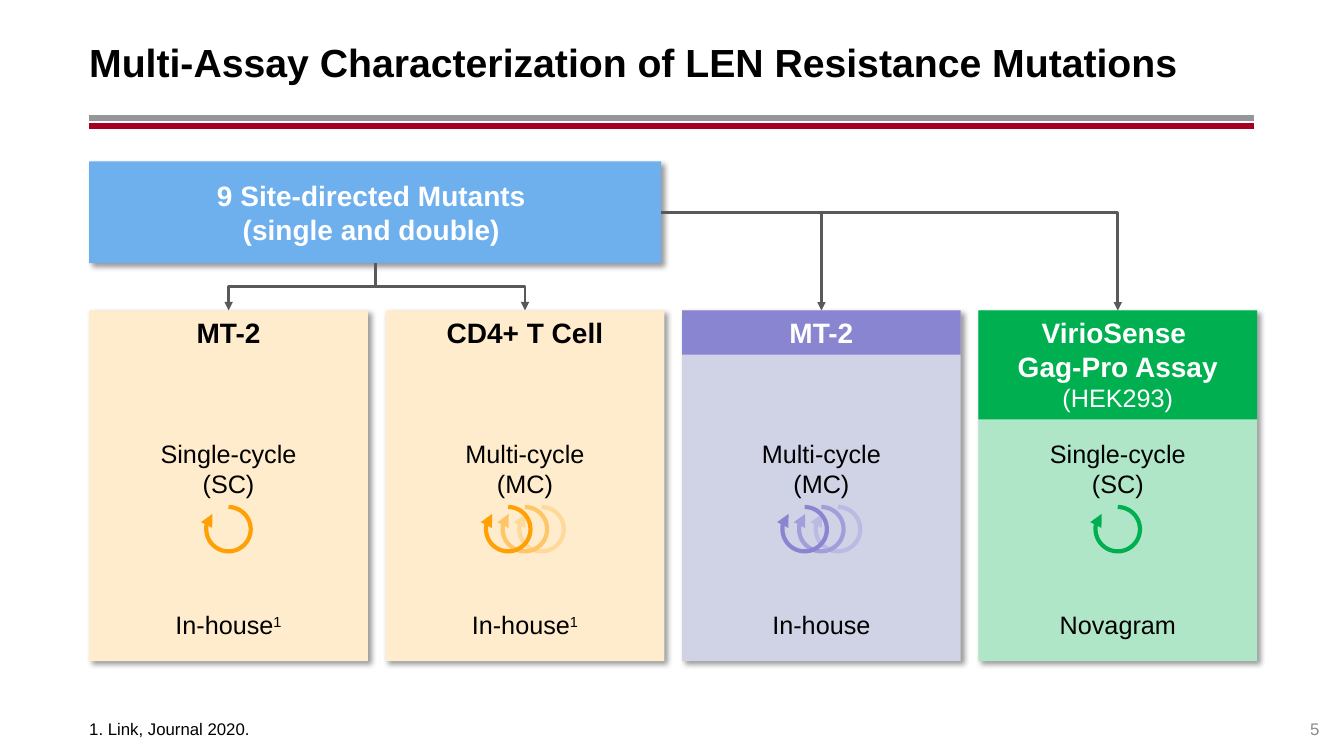
import dataclasses

import pptx
import pptx.dml.color
import pptx.enum.shapes
import pptx.enum.text
import pptx.oxml
import pptx.oxml.ns
import pptx.util

SHAPE = pptx.enum.shapes.MSO_SHAPE
ALIGN = pptx.enum.text.PP_ALIGN
ANCHOR = pptx.enum.text.MSO_ANCHOR
NS = pptx.oxml.ns.nsdecls("a")


@dataclasses.dataclass(frozen=True)
class Theme:
    font: str = "Arial"
    title: int = 28
    head: int = 20
    body: int = 18
    note: int = 12
    black: str = "000000"
    white: str = "FFFFFF"
    grey: str = "8C8C8C"
    rule_grey: str = "969696"
    rule_red: str = "A50021"
    arrow: str = "595959"
    blue: str = "6EAFEE"
    cream: str = "FFECCD"
    lilac: str = "D0D2E6"
    mint: str = "B0E6C8"
    purple: str = "8985D1"
    green: str = "00B050"
    oranges: tuple = ("FFA004", "FFC668", "FFD99B")
    purples: tuple = ("8985D1", "A19EDA", "BCBAE4")


T = Theme()
CARD, SPAN = 0.94, 3.93  # widths in columns
CARD_TOP, CARD_ROWS = 30.8, 34.8
CYCLE = 0.15


def rgb(colour):
    return pptx.dml.color.RGBColor.from_string(colour)


class Sheet:
    """One slide on a grid of 2.94 inch columns and 0.1 inch rows."""

    def __init__(self, prs, theme):
        self.theme = theme
        self.s = prs.slides.add_slide(prs.slide_layouts[5])

    def x(self, col):
        return pptx.util.Inches(0.885 + 2.94 * col)

    def y(self, row):
        return pptx.util.Inches(0.1 * row)

    def box(self, col, row, cols, rows):
        left, top = self.x(col), self.y(row)
        return left, top, self.x(col + cols) - left, self.y(row + rows) - top

    def set_text(self, sp, paras, colour=T.black, align=ALIGN.CENTER, anchor=ANCHOR.TOP,
                 gap=0, margins=(0.1, 0.05, 0.1, 0.05), sup=""):
        """Fill sp with (text, size, bold) paragraphs; sup is a closing superscript."""
        tf = sp.text_frame
        tf.word_wrap = True
        tf.auto_size = pptx.enum.text.MSO_AUTO_SIZE.NONE
        tf.vertical_anchor = anchor
        tf.margin_left, tf.margin_top, tf.margin_right, tf.margin_bottom = map(
            pptx.util.Inches, margins)
        for i, (text, size, bold) in enumerate(paras):
            p = tf.add_paragraph() if i else tf.paragraphs[0]
            p.text = text
            p.alignment = align
            p.space_before = p.space_after = pptx.util.Pt(gap)
            if sup:
                r = p.add_run()
                r.text = sup
                r._r.get_or_add_rPr().set("baseline", "30000")
            for r in p.runs:
                r.font.name, r.font.size, r.font.bold = self.theme.font, pptx.util.Pt(size), bold
                r.font.color.rgb = rgb(colour)

    def title(self, text, *place):
        sp = self.s.shapes.title
        sp.left, sp.top, sp.width, sp.height = self.box(*place)
        self.set_text(sp, [(text, self.theme.title, True)], align=ALIGN.LEFT,
                      anchor=ANCHOR.MIDDLE, margins=(0, 0.05, 0.1, 0.05))

    def text(self, place, paras, **style):
        self.set_text(self.s.shapes.add_textbox(*self.box(*place)), paras, **style)

    def rect(self, place, fill, paras=(), shadow=True, **style):
        sp = self.s.shapes.add_shape(SHAPE.RECTANGLE, *self.box(*place))
        sp.fill.solid()
        sp.fill.fore_color.rgb = rgb(fill)
        sp.line.fill.background()
        sp.shadow.inherit = False
        if shadow:
            sp._element.spPr.find(pptx.oxml.ns.qn("a:effectLst")).append(pptx.oxml.parse_xml(
                f'<a:outerShdw {NS} blurRad="50800" dist="38100" dir="2700000" algn="tl" '
                'rotWithShape="0"><a:srgbClr val="000000"><a:alpha val="40000"/>'
                '</a:srgbClr></a:outerShdw>'))
        self.set_text(sp, paras, **style)
        return sp

    def stroke(self, sp, colour, points, arrow=True):
        sp.line.color.rgb = rgb(colour)
        sp.line.width = pptx.util.Pt(points)
        if arrow:
            sp.line._get_or_add_ln().append(
                pptx.oxml.parse_xml(f'<a:tailEnd {NS} type="triangle"/>'))

    def connector(self, kind, *ends):
        c = self.s.shapes.add_connector(kind, *ends)
        c._element.spPr.append(pptx.oxml.parse_xml(f"<a:effectLst {NS}/>"))
        return c

    def rule(self, row, colour):
        y = self.y(row)
        c = self.connector(pptx.enum.shapes.MSO_CONNECTOR.STRAIGHT,
                           self.x(0), y, self.x(SPAN), y)
        self.stroke(c, colour, 4.25, arrow=False)

    def elbow(self, source, card, side):
        """Bent arrow from the source's bottom (2) or right (3) to the card's top."""
        c = self.connector(pptx.enum.shapes.MSO_CONNECTOR.ELBOW, 0, 0, 0, 0)
        c.begin_connect(source, side)
        c.end_connect(card, 0)
        x1, y1, x2, y2 = c.begin_x, c.begin_y, c.end_x, c.end_y
        width, height = abs(x2 - x1), y2 - y1
        rot, flip = 0, "0"
        if side == 2:
            rot, flip = (270, "1") if x2 > x1 else (90, "0")
            width, height = height, width
        else:
            c._element.spPr.prstGeom.set("prst", "bentConnector2")
        xfrm = c._element.spPr.xfrm
        for name, value in (("rot", str(rot * 60000)), ("flipH", flip), ("flipV", "0")):
            xfrm.set(name, value)
        c.left, c.top = (x1 + x2 - width) // 2, (y1 + y2 - height) // 2
        c.width, c.height = width, height
        self.stroke(c, self.theme.arrow, 2)

    def cycles(self, centre, row, colours):
        """Overlapping circular arrows centred on a column, the first colour in front."""
        step = CYCLE * 3 / 8
        first = centre - CYCLE / 2 - step * (len(colours) - 1) / 2
        for i, colour in reversed(list(enumerate(colours))):
            sp = self.s.shapes.add_shape(
                SHAPE.ARC, *self.box(first + i * step, row, CYCLE, 4.4))
            sp.adjustments[0], sp.adjustments[1] = 162, 134.11
            sp.fill.background()
            sp.shadow.inherit = False
            self.stroke(sp, colour, 3)


def main():
    prs = pptx.Presentation()
    prs.slide_width, prs.slide_height = pptx.util.Inches(13.33), pptx.util.Inches(7.5)
    sheet = Sheet(prs, T)
    sheet.rule(11.7, T.rule_grey)
    sheet.rule(12.5, T.rule_red)
    sheet.title("Multi-Assay Characterization of LEN Resistance Mutations", 0, 1.8, SPAN, 8.6)

    mutants = sheet.rect((0, 16, 1.93, 10.1), T.blue,
                         [("9 Site-directed Mutants ", T.head, True),
                          ("(single and double) ", T.head, True)],
                         colour=T.white, anchor=ANCHOR.MIDDLE)

    single, multi = "Single-cycle\v(SC)", "Multi-cycle\v(MC)"
    mt2 = [("MT-2", T.head, True)]
    tcell = [("CD4+ T Cell", T.head, True)]
    gag_pro = [("VirioSense \vGag-Pro Assay", T.head, True), ("(HEK293)", T.body, False)]
    # card fill, heading, band fill, band rows, cycle label, cycle colours, lab, reference
    assays = [
        (T.cream, mt2, None, 0, single, T.oranges[:1], "In-house", "1"),
        (T.cream, tcell, None, 0, multi, T.oranges, "In-house", "1"),
        (T.lilac, mt2, T.purple, 4.4, multi, T.purples, "In-house", ""),
        (T.mint, gag_pro, T.green, 10.8, single, (T.green,), "Novagram", ""),
    ]
    for col, (fill, head, band, rows, label, colours, lab, ref) in enumerate(assays):
        card = sheet.rect((col, CARD_TOP, CARD, CARD_ROWS), fill, () if band else head, gap=6)
        sheet.elbow(mutants, card, 3 if band else 2)
        if band:
            sheet.rect((col, CARD_TOP, CARD, rows), band, head, shadow=False, colour=T.white)
        sheet.text((col, 43, CARD, 7.1), [(label, T.body, False)], gap=6)
        sheet.cycles(col + CARD / 2, 50.3, colours)
        sheet.text((col, 60, CARD, 4), [(lab, T.body, False)], gap=6, sup=ref)

    flush = dict(anchor=ANCHOR.BOTTOM, margins=(0, 0, 0, 0))
    sheet.text((0, 71.3, SPAN, 2), [("1. Link, Journal 2020.", T.note, False)],
               align=ALIGN.LEFT, **flush)
    sheet.text((SPAN, 69.3, 0.22, 4), [("5", T.note, False)],
               colour=T.grey, align=ALIGN.RIGHT, **flush)
    prs.save("out.pptx")


if __name__ == "__main__":
    main()
